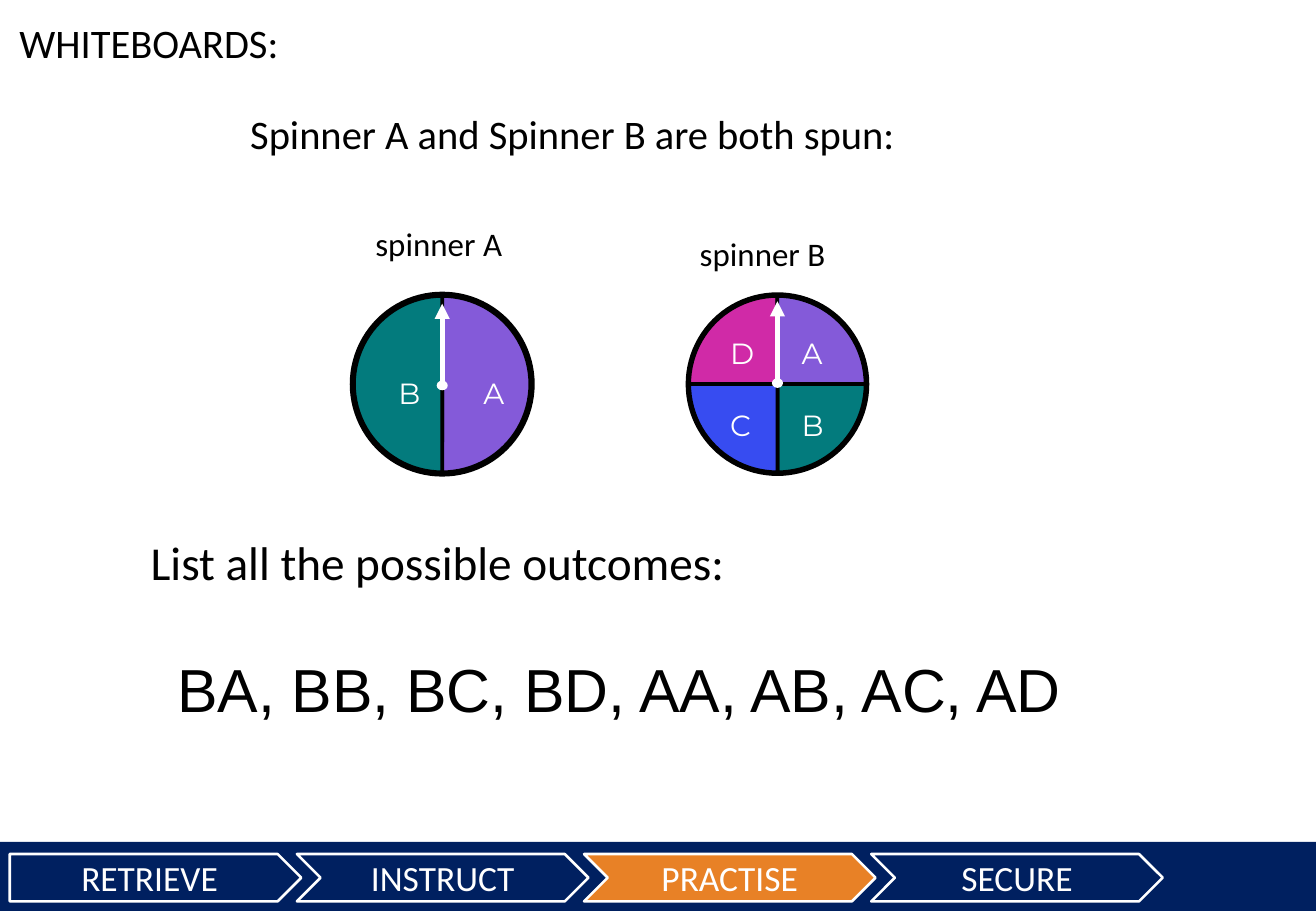
"""Build the whiteboard slide on listing the outcomes of two spinners."""
import dataclasses

import pptx
import pptx.dml.color
import pptx.enum.shapes
import pptx.enum.text
import pptx.oxml
import pptx.oxml.ns
import pptx.util

Pt = pptx.util.Pt
SHAPE = pptx.enum.shapes.MSO_SHAPE
ALIGN = pptx.enum.text.PP_ALIGN
ANCHOR = pptx.enum.text.MSO_ANCHOR


@dataclasses.dataclass(frozen=True)
class Theme:
    navy: str = "002060"
    orange: str = "E88126"
    white: str = "FFFFFF"
    black: str = "000000"
    purple: str = "845AD9"
    teal: str = "037B7D"
    blue: str = "374CF1"
    pink: str = "D02AA7"
    body: str = "Calibri"
    answer: str = "Arial"
    label: str = "Montserrat"
    title_size: float = 24
    task_size: float = 28
    answer_size: float = 36
    caption_size: float = 19.5
    label_size: float = 17.3
    step_size: float = 21


theme = Theme()


def add_shape(shapes, kind, box, fill=None, line=None, width=0):
    sp = shapes.add_shape(kind, *[Pt(v) for v in box])
    sp.shadow.inherit = False
    if fill:
        sp.fill.solid()
        sp.fill.fore_color.rgb = pptx.dml.color.RGBColor.from_string(fill)
    else:
        sp.fill.background()
    if line:
        sp.line.color.rgb = pptx.dml.color.RGBColor.from_string(line)
        sp.line.width = Pt(width)
    else:
        sp.line.fill.background()
    return sp


def set_text(sp, text, size, font, color, align=ALIGN.LEFT, inset=(0, 0), wrap=True):
    tf = sp.text_frame
    tf.word_wrap = wrap
    tf.margin_left = tf.margin_right = Pt(inset[0])
    tf.margin_top = tf.margin_bottom = Pt(inset[1])
    p = tf.paragraphs[0]
    p.alignment = align
    r = p.add_run()
    r.text = text
    r.font.size = Pt(size)
    r.font.name = font
    r.font.color.rgb = pptx.dml.color.RGBColor.from_string(color)
    return p


prs = pptx.Presentation()
prs.slide_width, prs.slide_height = Pt(780), Pt(540)
s = prs.slides.add_slide(prs.slide_layouts[6])

add_shape(s.shapes, SHAPE.RECTANGLE, (0, 499, 780, 41), theme.navy)
for i, step in enumerate(("RETRIEVE", "INSTRUCT", "PRACTISE", "SECURE")):
    kind = SHAPE.CHEVRON if i else SHAPE.PENTAGON
    fill = theme.orange if step == "PRACTISE" else theme.navy
    sp = add_shape(s.shapes, kind, (5.8 + 170.2 * i, 506.2, 172.8, 28.1),
                   fill, theme.white, 1.5)
    sp.text_frame.vertical_anchor = ANCHOR.MIDDLE
    set_text(sp, step, theme.step_size, theme.body, theme.white, ALIGN.CENTER, (7.2, 3.6))

for text, box, size, font in (
    ("Spinner A and Spinner B are both spun:", (148.3, 67.7, 702.7, 55.4),
     theme.title_size, theme.body),
    ("List all the possible outcomes:", (89.3, 319.7, 570.2, 38.9),
     theme.task_size, theme.body),
    ("spinner A", (222.5, 135.4, 95, 28.8), theme.caption_size, theme.body),
    ("spinner B", (414.7, 141.1, 95, 28.8), theme.caption_size, theme.body),
    ("BA, BB, BC, BD, AA, AB, AC, AD", (105.1, 391, 570.2, 28.8),
     theme.answer_size, theme.answer),
):
    sp = s.shapes.add_textbox(*[Pt(v) for v in box])
    p = set_text(sp, text, size, font, theme.black)
    p.line_spacing = 0.9
    p.space_after = Pt(10.8)

top, size, quarter = 174.4, 106.6, 54
spinners = (
    (208.8, 3, 228.2,
     ((3, 1, theme.purple), (1, 3, theme.teal)),
     (("B", 19.4, 40.2), ("A", 69.8, 40.2))),
    (407.5, 2.25, 226.8,
     ((0, 1, theme.teal), (1, 2, theme.blue), (2, 3, theme.pink), (3, 0, theme.purple)),
     (("C", 17.3, 59), ("D", 17.3, 16.5), ("A", 59.8, 16.5), ("B", 59.8, 59))),
)
for left, rim, hub, sectors, labels in spinners:
    shapes = s.shapes.add_group_shape().shapes
    add_shape(shapes, SHAPE.OVAL, (left, top, size, size), None, theme.black, rim)
    for start, end, color in sectors:
        sp = add_shape(shapes, SHAPE.PIE, (left + 1, top + 1, size - 2, size - 2),
                       color, theme.black, 2.25)
        sp.adjustments[0] = start * quarter
        sp.adjustments[1] = end * quarter
    for text, x, y in labels:
        sp = shapes.add_textbox(Pt(left + x), Pt(top + y), Pt(38), Pt(36.7))
        set_text(sp, text, theme.label_size, theme.label, theme.white, inset=(7.9, 7.9))
    x = left + size / 2
    needle = shapes.add_connector(pptx.enum.shapes.MSO_CONNECTOR.STRAIGHT,
                                  Pt(x), Pt(hub), Pt(x), Pt(hub - 48.2))
    needle.line.color.rgb = pptx.dml.color.RGBColor.from_string(theme.white)
    needle.line.width = Pt(3)
    ns = pptx.oxml.ns.nsdecls("a")
    needle.line._get_or_add_ln().append(
        pptx.oxml.parse_xml(f'<a:tailEnd {ns} type="triangle"/>'))
    needle._element.spPr.append(pptx.oxml.parse_xml(f"<a:effectLst {ns}/>"))
    add_shape(shapes, SHAPE.OVAL, (x - 2.9, hub - 2.2, 5.8, 5),
              theme.white, theme.white, 0.75)

sp = add_shape(s.shapes, SHAPE.RECTANGLE, (5.8, 8.6, 164.9, 33.8), theme.white)
sp.text_frame.vertical_anchor = ANCHOR.TOP
set_text(sp, "WHITEBOARDS:", theme.title_size, theme.body, theme.black,
         ALIGN.CENTER, (5, 2.2), wrap=False)

prs.save("out.pptx")
